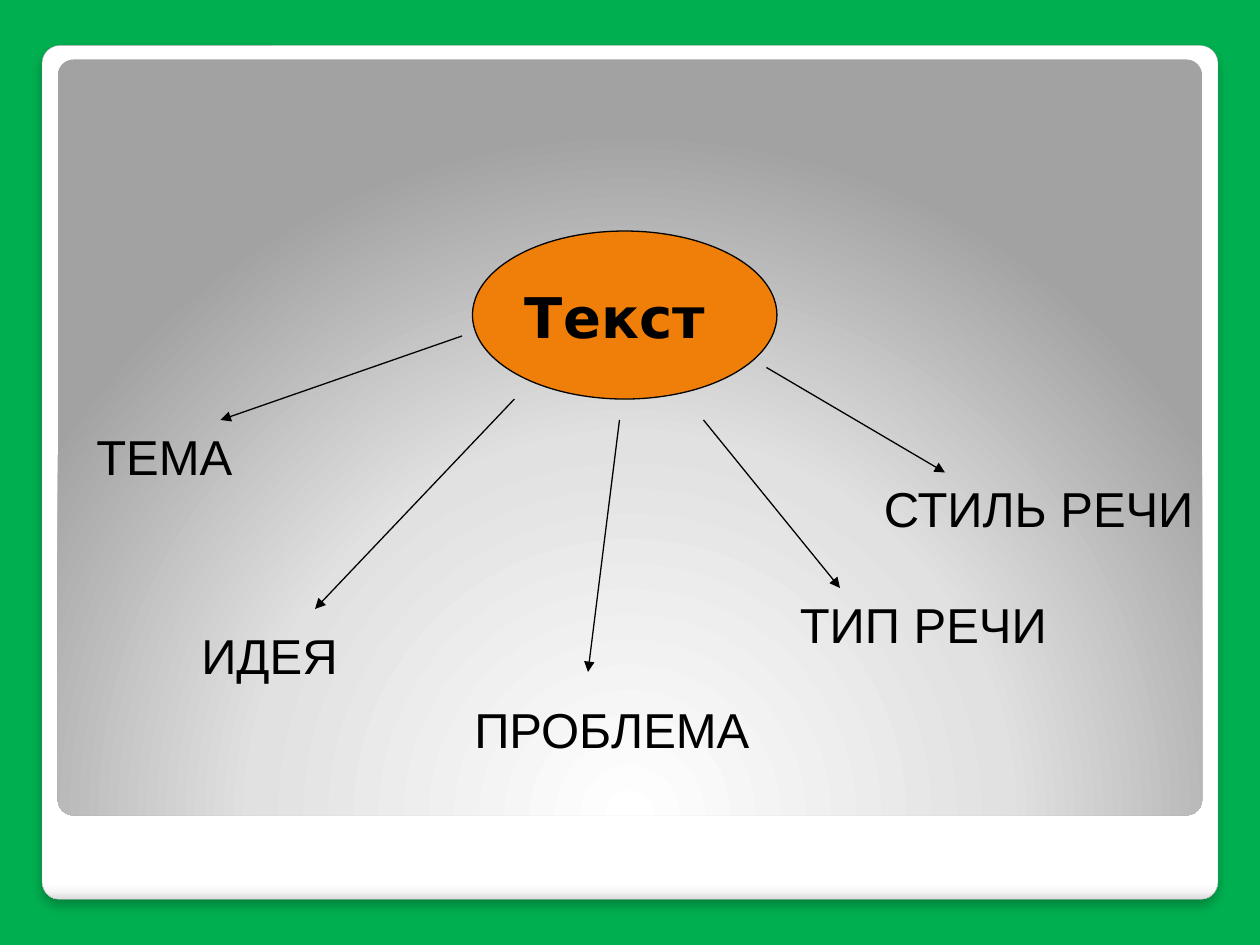
import dataclasses
import pptx
import pptx.dml.color
import pptx.enum.shapes
import pptx.enum.text
import pptx.oxml
import pptx.oxml.ns
import pptx.util

Pt = pptx.util.Pt
Shape = pptx.enum.shapes.MSO_SHAPE
Text = pptx.enum.text
qn = pptx.oxml.ns.qn
NS = pptx.oxml.ns.nsdecls("a")


@dataclasses.dataclass(frozen=True)
class Theme:
    """Colours, fonts and type sizes of the slide."""
    back: str = "00B050"
    ink: str = "000000"
    oval: str = "F07F09"
    edge: str = "A4A4A4"
    card: tuple = ((0, "FFFFFF"), (98, "FFFFFF"), (99, "F7F7F7"), (100, "DADADA"))
    glow: tuple = ((0, "FFFFFF"), (55, "E1E1E1"), (100, "A2A2A2"))
    head: str = "DejaVu Sans"
    body: str = "Arial"
    big: int = 32
    small: int = 28
    thin: float = 0.75


THEME = Theme()
DOWN = '<a:lin ang="5400000" scaled="0"/>'
ROUND = ('<a:path path="circle"><a:fillToRect l="50000" t="175000" '
         'r="50000" b="-75000"/></a:path>')
SHADE = (f'<a:outerShdw {NS} blurRad="{Pt(6)}" dist="{Pt(4)}" dir="5400000" algn="t" '
         'rotWithShape="0"><a:srgbClr val="000000"><a:alpha val="25000"/>'
         '</a:srgbClr></a:outerShdw>')
RAYS = (
    ("СТИЛЬ РЕЧИ", (168, 78), (270, 138), (228, 138), 194),
    ("ТИП РЕЧИ", (132, 108), (210, 204), (180, 204), 157),
    ("ПРОБЛЕМА", (84, 108), (66, 252), (-6, 264), 174),
    ("ИДЕЯ", (24, 96), (-90, 216), (-162, 222), 94),
    ("ТЕМА", (-6, 60), (-144, 108), (-222, 108), 93),
)


def rgb(code):
    """Turn a hex code into a colour."""
    return pptx.dml.color.RGBColor.from_string(code)


def blend(shape, stops, course):
    """Fill a shape with a gradient."""
    shape.fill.background()
    marks = "".join(f'<a:gs pos="{pos * 1000}"><a:srgbClr val="{code}"/></a:gs>'
                    for pos, code in stops)
    grad = pptx.oxml.parse_xml(
        f'<a:gradFill {NS} rotWithShape="1"><a:gsLst>{marks}</a:gsLst>{course}</a:gradFill>')
    props = shape.element.spPr
    props.replace(props.find(qn("a:noFill")), grad)


def plate(slide, box, stops, course):
    """Add a rounded plate with a gradient and no line."""
    shape = slide.shapes.add_shape(Shape.ROUNDED_RECTANGLE, *map(Pt, box))
    shape.adjustments[0] = 0.021
    shape.shadow.inherit = False
    shape.line.fill.background()
    blend(shape, stops, course)
    return shape


def frame(slide, box):
    """Draw the white card and the grey panel inside it."""
    left, top, width, height = box
    card = plate(slide, box, THEME.card, DOWN)
    card.line.color.rgb = rgb(THEME.edge)
    card.line.width = Pt(0.16)
    card.element.spPr.find(qn("a:effectLst")).append(pptx.oxml.parse_xml(SHADE))
    plate(slide, (left + 9, top + 8, width - 18, height - 56), THEME.glow, ROUND)


def style(para, face, size, bold=False):
    """Set the font of a paragraph."""
    para.alignment = Text.PP_ALIGN.LEFT
    font = para.font
    font.name, font.size, font.bold = face, Pt(size), bold
    font.color.rgb = rgb(THEME.ink)


def hub(slide, box):
    """Draw the oval with the slide title on it."""
    left, top, width, height = box
    oval = slide.shapes.add_shape(Shape.OVAL, *map(Pt, box))
    oval.shadow.inherit = False
    oval.fill.solid()
    oval.fill.fore_color.rgb = rgb(THEME.oval)
    oval.line.color.rgb = rgb(THEME.ink)
    oval.line.width = Pt(THEME.thin)
    title = slide.shapes.title
    oval.element.addnext(title.element)
    title.left, title.top = Pt(left + 30), Pt(top + 30)
    title.width, title.height = Pt(112), Pt(38)
    text = title.text_frame
    text.text = "Текст"
    text.auto_size = Text.MSO_AUTO_SIZE.NONE
    text.vertical_anchor = Text.MSO_ANCHOR.BOTTOM
    text.margin_left = text.margin_right = text.margin_bottom = 0
    text.margin_top = Pt(3.6)
    style(text.paragraphs[0], THEME.head, THEME.big, True)


def arrow(slide, start, end):
    """Draw a thin arrow between two points."""
    line = slide.shapes.add_connector(
        pptx.enum.shapes.MSO_CONNECTOR.STRAIGHT, *map(Pt, start + end))
    line.line.color.rgb = rgb(THEME.ink)
    line.line.width = Pt(THEME.thin)
    line.line.fill.solid()
    line.line.color.rgb = rgb(THEME.ink)
    props = line.element.spPr
    props.find(qn("a:ln")).append(pptx.oxml.parse_xml(f'<a:tailEnd {NS} type="triangle"/>'))
    props.append(pptx.oxml.parse_xml(f"<a:effectLst {NS}/>"))


def label(slide, box, words):
    """Add a one-line label."""
    text = slide.shapes.add_textbox(*map(Pt, box)).text_frame
    text.text = words
    text.word_wrap = False
    text.auto_size = Text.MSO_AUTO_SIZE.SHAPE_TO_FIT_TEXT
    style(text.paragraphs[0], THEME.body, THEME.small)


def fan(slide, box):
    """Draw the arrows and labels around the hub."""
    left, top = box[:2]

    def place(spot):
        """Shift a point by the corner of the hub."""
        return left + spot[0], top + spot[1]

    for words, start, end, spot, width in RAYS:
        arrow(slide, place(start), place(end))
    for words, start, end, spot, width in RAYS:
        label(slide, place(spot) + (width, 41), words)


def main():
    """Build and save the slide."""
    deck = pptx.Presentation()
    deck.slide_width, deck.slide_height = Pt(720), Pt(540)
    slide = deck.slides.add_slide(deck.slide_layouts[5])
    slide.background.fill.solid()
    slide.background.fill.fore_color.rgb = rgb(THEME.back)
    oval = (270, 132, 174, 96)
    frame(slide, (24, 26, 672, 488))
    hub(slide, oval)
    fan(slide, oval)
    deck.save("out.pptx")


if __name__ == "__main__":
    main()
